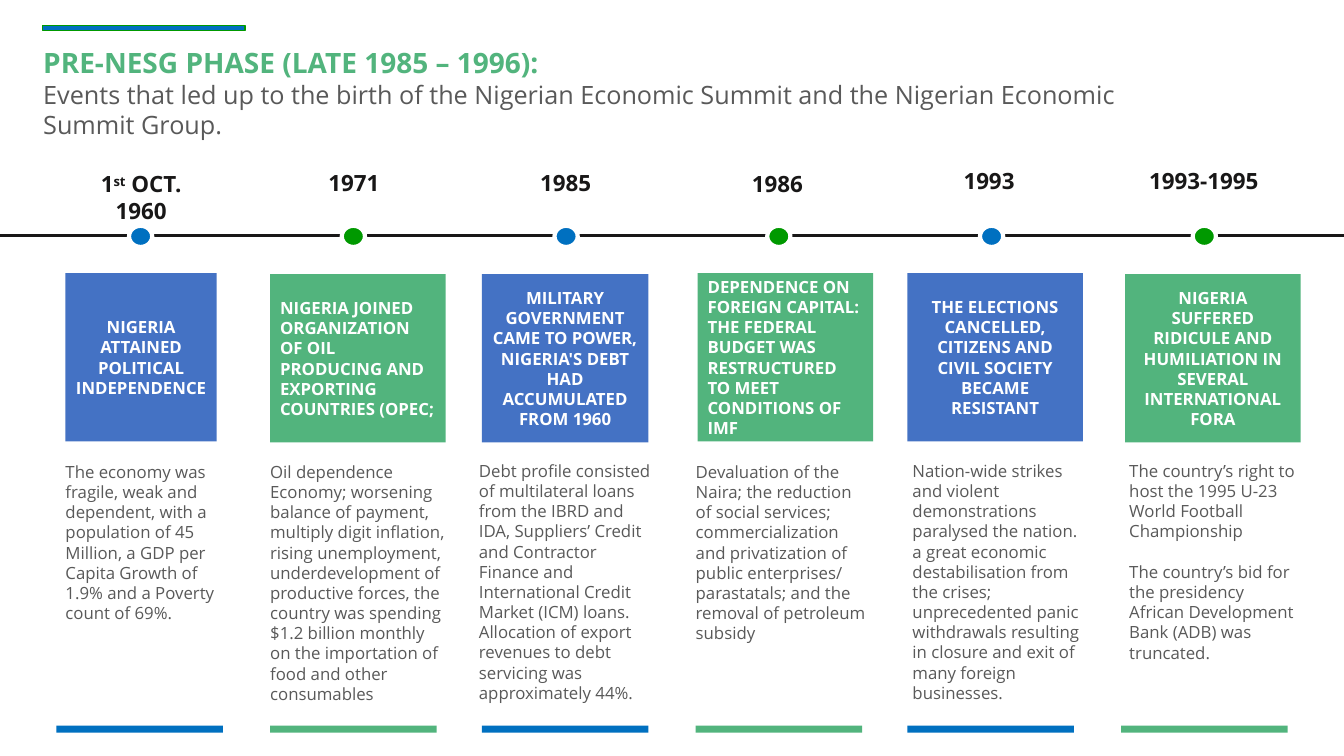
from collections import namedtuple
from pptx import Presentation
from pptx.dml.color import RGBColor
from pptx.enum.shapes import MSO_CONNECTOR, MSO_SHAPE
from pptx.enum.text import MSO_ANCHOR, MSO_AUTO_SIZE, PP_ALIGN
from pptx.oxml.ns import qn
from pptx.util import Inches, Pt
from lxml.etree import SubElement

COLORS = {
    "blue": "0070C0", "card_blue": "4472C4", "green": "52B47D",
    "dot_green": "009900", "ink": "181717", "gray": "595959", "white": "FFFFFF",
}
STYLES = {
    "heading": {"size": 20, "color": "green", "bold": True},
    "subtitle": {"size": 18, "color": "gray", "bold": False},
    "year": {"size": 16, "color": "ink", "bold": True},
    "card": {"size": 12, "color": "white", "bold": True},
    "detail": {"size": 12, "color": "gray", "bold": False},
}
SUPERSCRIPT = "30000"
PARAGRAPH_GAP = Pt(14.5)

Event = namedtuple("Event", "year year_at card card_at card_align detail detail_at")
EVENTS = [
    Event([[("1", None), ("st", SUPERSCRIPT), (" OCT.", None)], "1960"],
          (0.65, 1.69, 1.5, 0.54),
          "NIGERIA ATTAINED POLITICAL INDEPENDENCE",
          (0.65, 2.71, 1.5, 1.67), PP_ALIGN.CENTER,
          ["The economy was fragile, weak and dependent, with a population of 45 Million, "
           "a GDP per Capita Growth of 1.9% and a Poverty count of 69%."],
          (0.65, 4.58, 1.53, 1.62)),
    Event(["1971"], (2.76, 1.68, 1.5, 0.27),
          "NIGERIA JOINED ORGANIZATION OF OIL PRODUCING AND EXPORTING COUNTRIES (OPEC;",
          (2.68, 2.72, 1.74, 1.67), PP_ALIGN.LEFT,
          ["Oil dependence Economy; worsening balance of payment, multiply digit inflation, "
           "rising unemployment, underdevelopment of productive forces, the country was "
           "spending $1.2 billion monthly on the importation of food and other consumables"],
          (2.68, 4.58, 1.74, 2.42)),
    Event(["1985"], (4.86, 1.68, 1.5, 0.27),
          "MILITARY GOVERNMENT CAME TO POWER, NIGERIA'S DEBT HAD ACCUMULATED FROM 1960",
          (4.78, 2.72, 1.65, 1.67), PP_ALIGN.CENTER,
          ["Debt profile consisted of multilateral loans from the IBRD and IDA, Suppliers’ "
           "Credit and Contractor Finance and International Credit Market (ICM) loans. "
           "Allocation of export revenues to debt servicing was approximately 44%."],
          (4.75, 4.57, 1.72, 2.42)),
    Event(["1986"], (6.96, 1.69, 1.5, 0.27),
          "DEPENDENCE ON FOREIGN CAPITAL: THE FEDERAL BUDGET WAS RESTRUCTURED "
          "TO MEET CONDITIONS OF IMF",
          (6.92, 2.71, 1.74, 1.67), PP_ALIGN.LEFT,
          ["Devaluation of the Naira; the reduction of social services; commercialization and "
           "privatization of public enterprises/ parastatals; and the removal of petroleum "
           "subsidy"],
          (6.9, 4.58, 1.72, 1.82)),
    Event(["1993"], (9.06, 1.66, 1.5, 0.27),
          "THE ELECTIONS CANCELLED, CITIZENS AND CIVIL SOCIETY BECAME RESISTANT",
          (9, 2.71, 1.74, 1.67), PP_ALIGN.CENTER,
          ["Nation-wide strikes and violent demonstrations paralysed the nation. a great "
           "economic destabilisation from the crises; unprecedented panic withdrawals "
           "resulting in closure and exit of many foreign businesses."],
          (9.05, 4.57, 1.72, 2.42)),
    Event(["1993-1995"], (11.19, 1.66, 1.5, 0.27),
          "NIGERIA SUFFERED RIDICULE AND HUMILIATION IN SEVERAL INTERNATIONAL FORA",
          (11.16, 2.72, 1.74, 1.67), PP_ALIGN.CENTER,
          ["The country’s right to host the 1995 U-23 World Football Championship",
           "The country’s bid for the presidency African Development Bank (ADB) was truncated."],
          (11.2, 4.57, 1.72, 2.02)),
]


def rgb(name):
    return RGBColor.from_string(COLORS[name])


def set_values(target, values):
    for name, value in values.items():
        setattr(target, name, value)


def add_span(para, text, style, baseline=None):
    span = para.add_run()
    span.text = text
    set_values(span.font, {"name": "Open Sans", "size": Pt(style["size"]), "bold": style["bold"]})
    span.font.color.rgb = rgb(style["color"])
    if baseline:
        span._r.get_or_add_rPr().set("baseline", baseline)


def write(frame, paragraphs, styles, align=PP_ALIGN.LEFT, gap=Pt(0)):
    for index, (content, style) in enumerate(zip(paragraphs, styles)):
        para = frame.add_paragraph() if index else frame.paragraphs[0]
        set_values(para, {"alignment": align, "space_before": gap if index else Pt(0)})
        spans = [(content, None)] if isinstance(content, str) else content
        for text, baseline in spans:
            add_span(para, text, STYLES[style], baseline)


def add_text(page, at, paragraphs, styles, inset=0, **layout):
    box = page.shapes.add_textbox(*map(Inches, at))
    frame = box.text_frame
    set_values(frame, {"word_wrap": True, "auto_size": MSO_AUTO_SIZE.SHAPE_TO_FIT_TEXT})
    for side in ("left", "top", "right", "bottom"):
        setattr(frame, f"margin_{side}", Inches(inset if side in ("left", "right") else inset / 2))
    write(frame, paragraphs, styles, **layout)


def add_block(page, at, fill, line=None, width=1, kind=MSO_SHAPE.RECTANGLE):
    block = page.shapes.add_shape(kind, *map(Inches, at))
    block.shadow.inherit = False
    block.fill.solid()
    block.fill.fore_color.rgb = rgb(fill)
    if line:
        block.line.color.rgb = rgb(line)
        block.line.width = Pt(width)
    else:
        block.line.fill.background()
    return block


def add_card(page, at, fill, text, align):
    frame = add_block(page, at, fill).text_frame
    set_values(frame, {"word_wrap": True, "vertical_anchor": MSO_ANCHOR.MIDDLE})
    write(frame, [text], ["card"], align)


def add_axis(page):
    y = Inches(2.34)
    axis = page.shapes.add_connector(MSO_CONNECTOR.STRAIGHT, 0, y, Inches(13.33), y)
    axis.line.color.rgb = rgb("ink")
    axis.line.width = Pt(2.25)
    SubElement(axis._element.spPr, qn("a:effectLst"))


def add_event(page, index, event):
    odd = index % 2
    dot_at = (1.28 + 2.11 * index, 2.24, 0.23, 0.21)
    bar_at = (0.56 + 4.22 * (index // 2) + 2.12 * odd, 7.2, 1.65, 0.07)
    add_block(page, dot_at, "dot_green" if odd else "blue", "white", 3, MSO_SHAPE.OVAL)
    add_text(page, event.year_at, event.year, ["year"] * len(event.year), align=PP_ALIGN.CENTER)
    add_card(page, event.card_at, "green" if odd else "card_blue", event.card, event.card_align)
    add_text(page, event.detail_at, event.detail, ["detail"] * len(event.detail),
             gap=PARAGRAPH_GAP)
    add_block(page, bar_at, "green" if odd else "blue")


def main():
    deck = Presentation()
    set_values(deck, {"slide_width": Inches(13.33), "slide_height": Inches(7.5)})
    page = deck.slides.add_slide(deck.slide_layouts[6])
    add_block(page, (0.42, 0.25, 2.01, 0.05), "blue", "dot_green")
    add_text(page, (0.33, 0.4, 11.39, 1.04),
             ["PRE-NESG PHASE (LATE 1985 – 1996):",
              "Events that led up to the birth of the Nigerian Economic Summit and the "
              "Nigerian Economic Summit Group."],
             ["heading", "subtitle"], inset=0.1)
    add_axis(page)
    for index, event in enumerate(EVENTS):
        add_event(page, index, event)
    deck.save("out.pptx")


if __name__ == "__main__":
    main()
